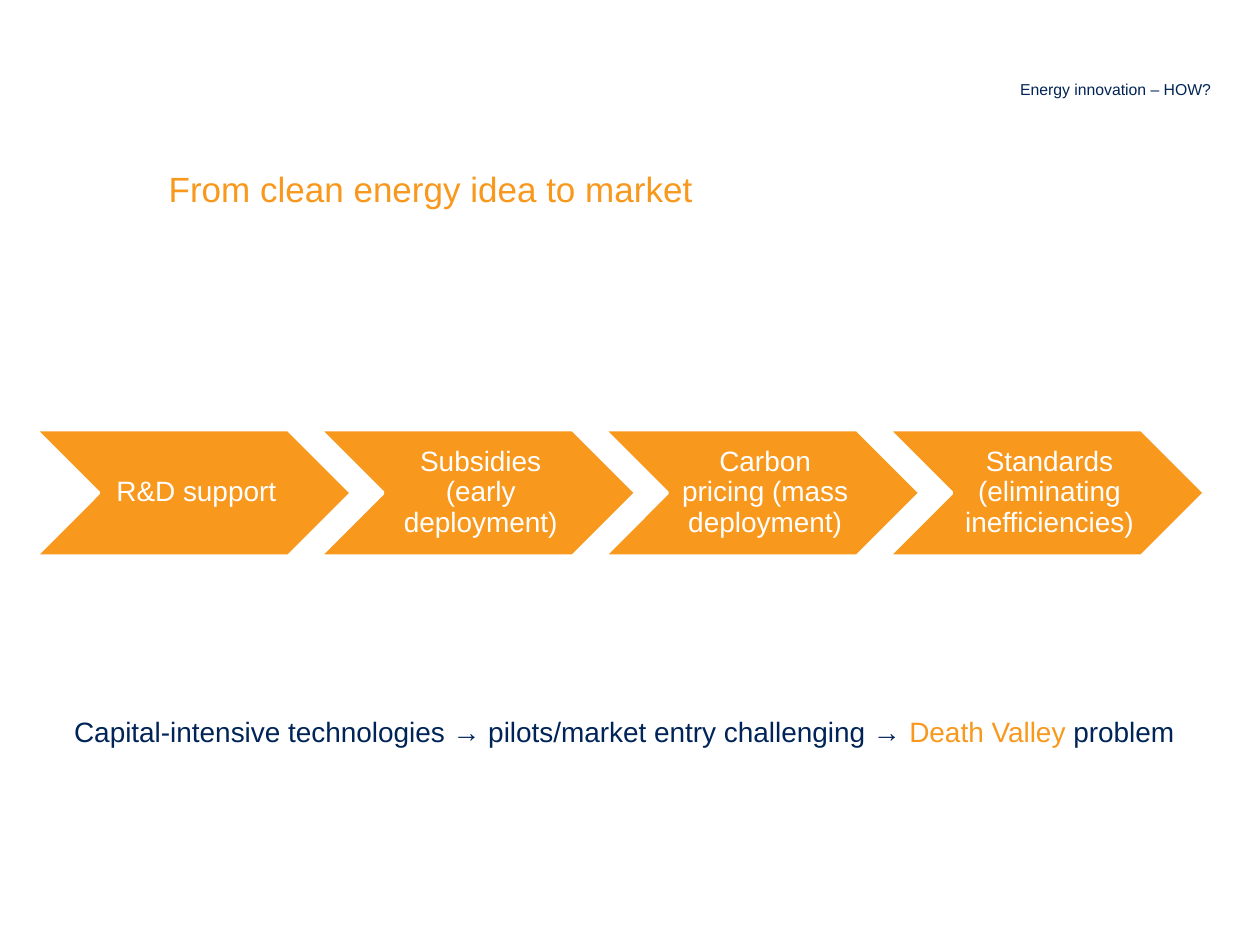
from pptx import Presentation
from pptx.dml.color import RGBColor
from pptx.enum import shapes, text
from pptx.util import Pt

THEME = {
    "font": "Arial",
    "navy": RGBColor.from_string("002457"),
    "orange": RGBColor.from_string("F8981D"),
    "white": RGBColor.from_string("FFFFFF"),
    "head": 9,
    "title": 20,
    "body": 16,
}

HEAD = [("Energy innovation – HOW?", "navy")]
TITLE = [("From clean energy idea to market", "orange")]
NOTE = [
    ("Capital-intensive technologies → pilots/market entry challenging → ", "navy"),
    ("Death Valley ", "orange"),
    ("problem", "navy"),
]
STEPS = [
    "R&D support",
    "Subsidies (early deployment)",
    "Carbon pricing (mass deployment)",
    "Standards (eliminating inefficiencies)",
]

LEFT, TOP, WIDE, HIGH, PITCH = 20.2, 245.5, 180.7, 72.3, 162.5


def write(shape, runs, size, align, anchor, pads):
    frame = shape.text_frame
    frame.word_wrap = True
    frame.vertical_anchor = anchor
    (frame.margin_left, frame.margin_top,
     frame.margin_right, frame.margin_bottom) = map(Pt, pads)
    para = frame.paragraphs[0]
    para.alignment = align
    para.font.name = THEME["font"]
    para.font.size = Pt(THEME[size])
    for words, tone in runs:
        run = para.add_run()
        run.text = words
        run.font.color.rgb = THEME[tone]
    return para


def add_text(slide, box, runs, size, align=text.PP_ALIGN.LEFT,
             anchor=text.MSO_ANCHOR.TOP, pads=(7.2, 8.64, 7.2, 3.6)):
    shape = slide.shapes.add_textbox(*map(Pt, box))
    write(shape, runs, size, align, anchor, pads)


def add_step(slide, index, words):
    box = LEFT + index * PITCH, TOP, WIDE, HIGH
    shape = slide.shapes.add_shape(shapes.MSO_SHAPE.CHEVRON, *map(Pt, box))
    shape.shadow.inherit = False
    shape.fill.solid()
    shape.fill.fore_color.rgb = THEME["orange"]
    shape.line.color.rgb = THEME["white"]
    shape.line.width = Pt(2)
    para = write(shape, [(words, "white")], "body", text.PP_ALIGN.CENTER,
                 text.MSO_ANCHOR.MIDDLE, (5, 1.7, 1.7, 1.7))
    para.line_spacing = 0.9


def main():
    deck = Presentation()
    deck.slide_width, deck.slide_height = Pt(720), Pt(540)
    slide = deck.slides.add_slide(deck.slide_layouts[6])
    add_text(slide, (35.3, 399.6, 662.4, 46), NOTE, "body")
    add_text(slide, (89.3, 87.1, 529.2, 36.7), TITLE, "title")
    add_text(slide, (127.4, 20.2, 571.7, 39.6), HEAD, "head",
             text.PP_ALIGN.RIGHT, text.MSO_ANCHOR.BOTTOM, (7.2, 3.6, 7.2, 3.6))
    for index, words in enumerate(STEPS):
        add_step(slide, index, words)
    deck.save("out.pptx")


if __name__ == "__main__":
    main()
